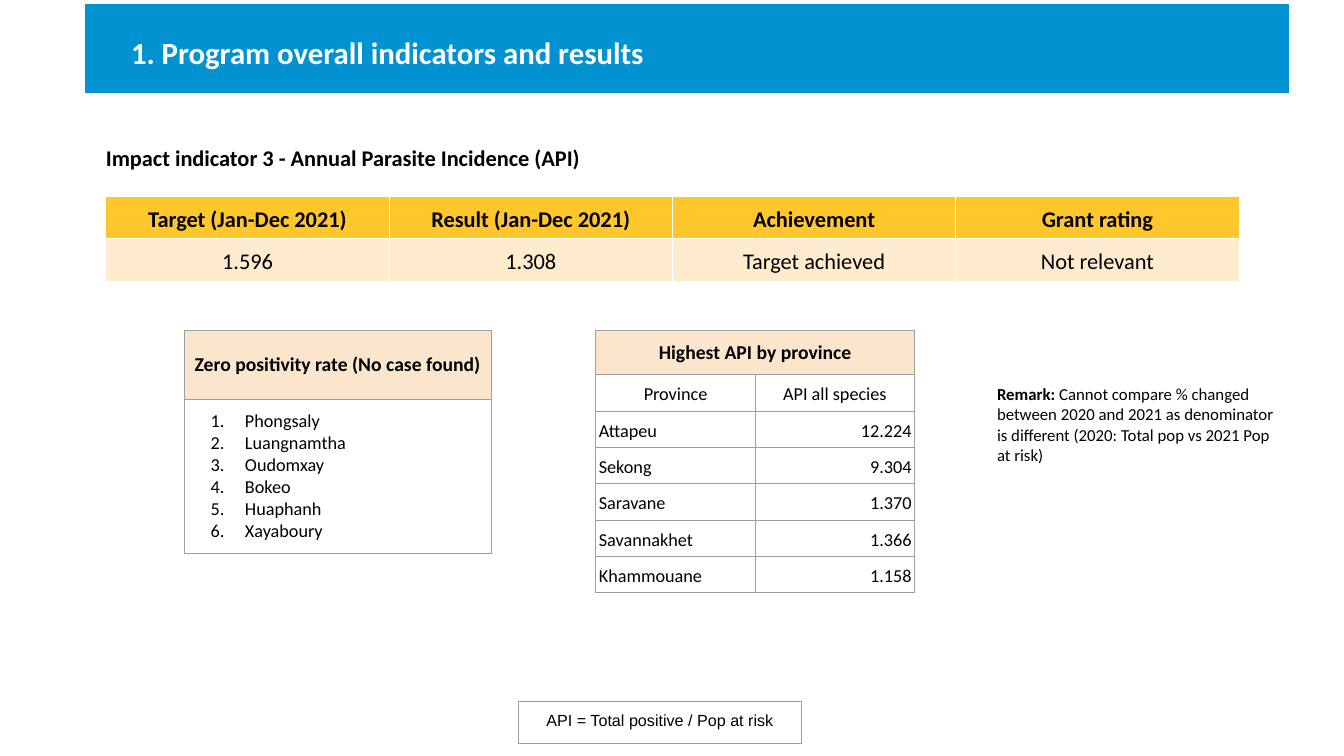
from lxml.etree import SubElement
from pptx import Presentation
from pptx.dml.color import RGBColor
from pptx.enum.shapes import MSO_SHAPE
from pptx.enum.text import MSO_ANCHOR, PP_ALIGN
from pptx.oxml import parse_xml
from pptx.oxml.ns import nsdecls, qn
from pptx.util import Inches, Pt

TITLE = "1. Program overall indicators and results"
INDICATOR = "Impact indicator 3 - Annual Parasite Incidence (API)"
RESULTS = [
    ("Target (Jan-Dec 2021)", "Result (Jan-Dec 2021)", "Achievement", "Grant rating"),
    ("1.596", "1.308", "Target achieved", "Not relevant"),
]
ZERO_HEADING = "Zero positivity rate (No case found)"
ZERO_PROVINCES = ["Phongsaly", "Luangnamtha", "Oudomxay", "Bokeo", "Huaphanh", "Xayaboury"]
HIGHEST_HEADING = "Highest API by province"
HIGHEST_COLUMNS = ("Province", "API all species")
HIGHEST_API = [
    ("Attapeu", "12.224"),
    ("Sekong", "9.304"),
    ("Saravane", "1.370"),
    ("Savannakhet", "1.366"),
    ("Khammouane", "1.158"),
]
FORMULA = "API = Total positive / Pop at risk"
REMARK = [
    ("Remark:", True),
    (" Cannot compare % changed between 2020 and 2021 as denominator is different "
     "(2020: Total pop vs 2021 Pop at risk)", False),
]

COLORS = {
    "banner": "0092D1", "white": "FFFFFF", "black": "000000", "grid": "9E9E9E",
    "gold": "FFC72C", "cream": "FFEBCD", "peach": "FCE5CD",
}
TIGHT = (0.03, 0.02)
ROOMY = (0.1, 0.1)
LEFT, CENTER, RIGHT = PP_ALIGN.LEFT, PP_ALIGN.CENTER, PP_ALIGN.RIGHT


def color(name):
    return RGBColor.from_string(COLORS[name])


def style(paragraph, size, bold=False, ink="black", align=LEFT, spacing=None, face="Calibri"):
    paragraph.alignment = align
    if spacing:
        paragraph.line_spacing = spacing
    font = paragraph.font
    font.name, font.size, font.bold = face, Pt(size), bold
    font.color.rgb = color(ink)


def set_insets(box, across, down):
    box.margin_left = box.margin_right = Inches(across)
    box.margin_top = box.margin_bottom = Inches(down)


def add_text_box(slide, left, top, width, height, inset):
    frame = slide.shapes.add_textbox(*map(Inches, (left, top, width, height))).text_frame
    frame.word_wrap = True
    set_insets(frame, inset, inset)
    return frame


def add_grid(slide, left, top, column_width, columns, row_heights):
    table = slide.shapes.add_table(
        len(row_heights), columns, Inches(left), Inches(top),
        Inches(column_width * columns), Inches(sum(row_heights))).table
    for column in table.columns:
        column.width = Inches(column_width)
    for row, height in zip(table.rows, row_heights):
        row.height = Inches(height)
    return table


def dress_cell(cell, fill=None, border="grid", insets=TIGHT, anchor=MSO_ANCHOR.MIDDLE):
    """Give a cell its insets, fill and four borders."""
    set_insets(cell, *insets)
    cell.vertical_anchor = anchor
    if fill:
        cell.fill.solid()
        cell.fill.fore_color.rgb = color(fill)
    else:
        cell.fill.background()
    properties = cell._tc.get_or_add_tcPr()
    for order, side in enumerate("LRTB"):
        properties.insert(order, parse_xml(
            f'<a:ln{side} {nsdecls("a")} w="{Pt(0.75)}"><a:solidFill>'
            f'<a:srgbClr val="{COLORS[border]}"/></a:solidFill></a:ln{side}>'))


def fill_cell(cell, text, size, bold=False, align=LEFT, spacing=None, face="Calibri", **dress):
    dress_cell(cell, **dress)
    cell.text = text
    for paragraph in cell.text_frame.paragraphs:
        style(paragraph, size, bold, align=align, spacing=spacing, face=face)


def number(paragraph):
    properties = paragraph._p.get_or_add_pPr()
    properties.set("marL", str(Inches(0.5)))
    properties.set("indent", str(Inches(-0.34)))
    SubElement(properties, qn("a:buAutoNum"), type="arabicPeriod")


def add_banner(slide):
    banner = slide.shapes.add_shape(
        MSO_SHAPE.RECTANGLE, *map(Inches, (0.85, 0.05, 11.93, 0.87)))
    banner.shadow.inherit = False
    banner.fill.solid()
    banner.fill.fore_color.rgb = banner.line.color.rgb = color("banner")
    banner.line.width = Pt(0.75)
    frame = banner.text_frame
    frame.word_wrap = True
    frame.vertical_anchor = MSO_ANCHOR.MIDDLE
    set_insets(frame, 0, 0)
    frame.margin_left = Inches(0.45)
    frame.text = TITLE
    style(frame.paragraphs[0], 22, True, "white", spacing=1.2)


def add_results(slide):
    table = add_grid(slide, 1.05, 1.95, 2.81, len(RESULTS[0]), [0.42] * len(RESULTS))
    for row, values in enumerate(RESULTS):
        for column, value in enumerate(values):
            fill_cell(table.cell(row, column), value, 16, row == 0, CENTER, 1.15,
                      fill="cream" if row else "gold", border="white")


def add_zero_provinces(slide):
    table = add_grid(slide, 1.83, 3.28, 3.04, 1, [0.68, 1.53])
    fill_cell(table.cell(0, 0), ZERO_HEADING, 14, True, fill="peach", insets=ROOMY)
    provinces = table.cell(1, 0)
    dress_cell(provinces, insets=ROOMY)
    provinces.text = "\n".join(ZERO_PROVINCES)
    for paragraph in provinces.text_frame.paragraphs:
        number(paragraph)
        style(paragraph, 13)


def add_highest_api(slide):
    rows = [HIGHEST_COLUMNS] + HIGHEST_API
    table = add_grid(slide, 5.91, 3.28, 1.58, 2, [0.44] + [0.36] * len(rows))
    heading = table.cell(0, 0)
    heading.merge(table.cell(0, 1))
    fill_cell(heading, HIGHEST_HEADING, 14, True, CENTER,
              fill="peach", insets=ROOMY, anchor=MSO_ANCHOR.TOP)
    dress_cell(table.cell(0, 1), "peach")
    for row, values in enumerate(rows, 1):
        aligns = (CENTER, CENTER) if row == 1 else (LEFT, RIGHT)
        for column, (value, align) in enumerate(zip(values, aligns)):
            fill_cell(table.cell(row, column), value, 13, align=align, spacing=1.15)


def add_remark(slide):
    paragraph = add_text_box(slide, 9.79, 3.71, 2.98, 1.01, 0.1).paragraphs[0]
    style(paragraph, 12)
    for text, bold in REMARK:
        run = paragraph.add_run()
        run.text = text
        run.font.bold = bold


def main():
    deck = Presentation()
    deck.slide_width, deck.slide_height = Inches(13.33), Inches(7.5)
    slide = deck.slides.add_slide(deck.slide_layouts[6])
    indicator = add_text_box(slide, 1.05, 1.35, 11.93, 0.4, 0)
    indicator.text = INDICATOR
    style(indicator.paragraphs[0], 16, True, spacing=1.3)
    add_banner(slide)
    add_results(slide)
    add_zero_provinces(slide)
    add_highest_api(slide)
    formula = add_grid(slide, 5.14, 6.96, 2.81, 1, [0.42]).cell(0, 0)
    fill_cell(formula, FORMULA, 11.5, align=CENTER, face="Arial",
              insets=ROOMY, anchor=MSO_ANCHOR.TOP)
    add_remark(slide)
    deck.save("out.pptx")


if __name__ == "__main__":
    main()
